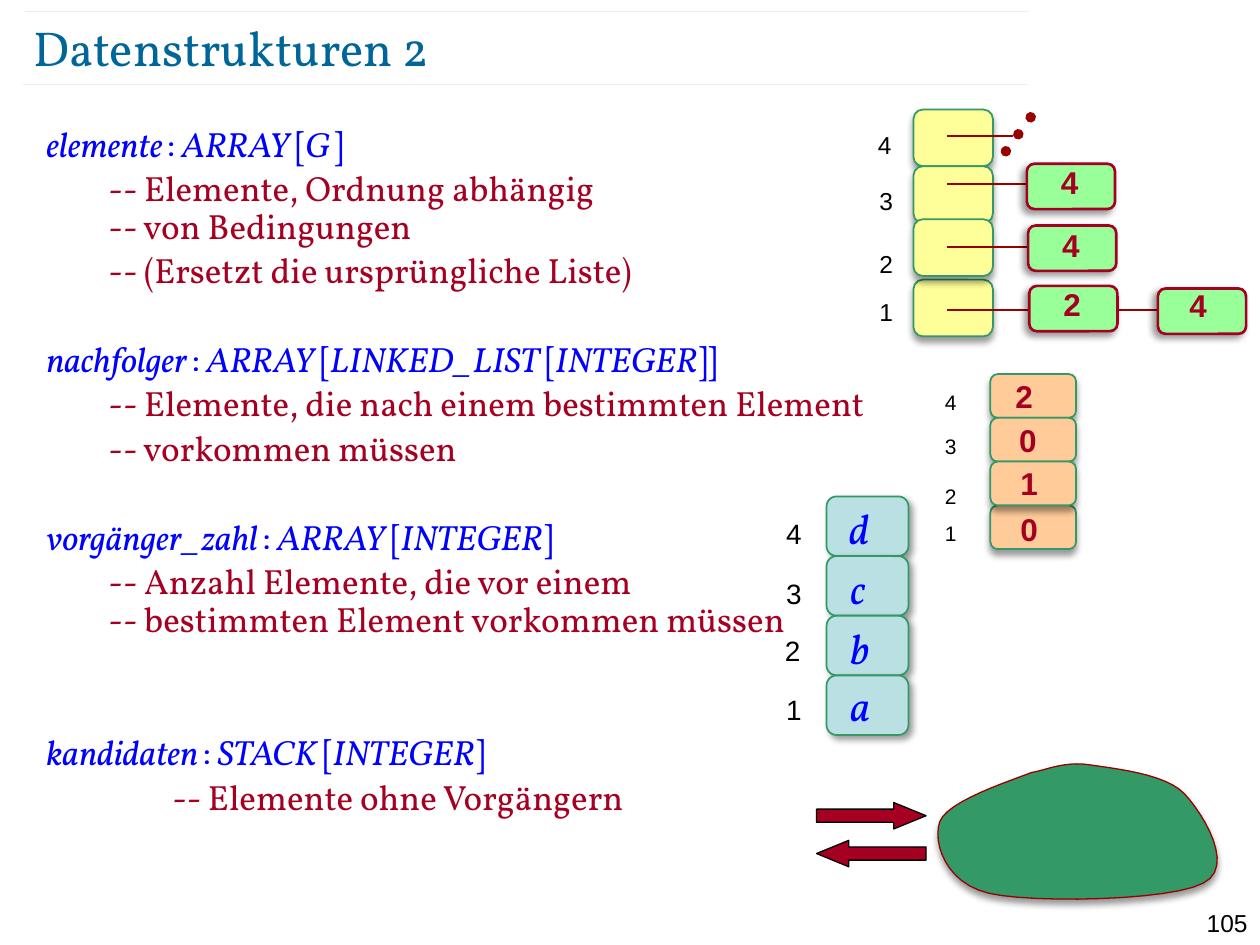
import pptx
import pptx.dml.color
import pptx.enum.dml
import pptx.enum.shapes
import pptx.enum.text
import pptx.oxml
import pptx.oxml.ns
import pptx.util

Pt = pptx.util.Pt
SHAPE = pptx.enum.shapes.MSO_SHAPE
ALIGN = pptx.enum.text.PP_ALIGN
ANCHOR = pptx.enum.text.MSO_ANCHOR

COLORS = {
    "title": "006699", "code": "0000FF", "comment": "A50021", "black": "000000",
    "link": "990000", "green": "339966", "yellow": "FFFF99", "lime": "99FF99",
    "blue": "BBE0E3", "peach": "FFCC99", "rule": "E6EFF4",
}
SERIF, SANS = "Vollkorn", "Arial"
UPRIGHT = (":", "[", "]", "]]")

# Heading pieces, comment paragraphs (with line breaks), comment indent, space before
SECTIONS = [
    (["elemente", " ", ":", " ARRAY ", "[", "G", " ", "]"],
     ["-- Elemente, Ordnung abhängig\n-- von Bedingungen",
      "-- (Ersetzt die ursprüngliche Liste)"], 35.5, 0),
    (["nachfolger", " ", ":", " ARRAY ", "[", "LINKED_LIST ", "[", "INTEGER", "]]"],
     ["-- Elemente, die nach einem bestimmten Element",
      "-- vorkommen müssen"], 35.5, 29.2),
    (["vorgänger_zahl", " ", ":", " ARRAY ", "[", "INTEGER", "]"],
     ["-- Anzahl Elemente, die vor einem\n-- bestimmten Element vorkommen müssen"],
     35.5, 29.2),
    (["kandidaten", " ", ":", " STACK ", "[", "INTEGER", "]"],
     ["-- Elemente ohne Vorgängern"], 72, 54.8),
]

# Outline of the candidate stack: start point and cubic curves, in points
BLOB_START = (589.7, 441.4)
BLOB_CURVES = [
    ((576.7, 446.4), (541.4, 457.9), (537.1, 469.4)),
    ((532.8, 481), (540, 504.7), (565.2, 510.5)),
    ((589.7, 516.2), (668.9, 514.8), (687.6, 504.7)),
    ((706.3, 495.4), (687.6, 465.1), (676.8, 453.6)),
    ((666, 442.1), (636.5, 439.2), (622.1, 437)),
    ((607.7, 434.9), (596.2, 440.6), (589.7, 441.4)),
]


def color(name):
    return pptx.dml.color.RGBColor.from_string(COLORS[name])


def add_effects(shape, angle=None):
    """Replace inherited effects by a soft shadow, or by none."""
    shadow = ""
    if angle is not None:
        shadow = (f'<a:outerShdw blurRad="{Pt(4)}" dist="{Pt(3)}" dir="{angle * 60000}" '
                  'algn="ctr" rotWithShape="0"><a:srgbClr val="000000">'
                  '<a:alpha val="40000"/></a:srgbClr></a:outerShdw>')
    shape._element.spPr.append(pptx.oxml.parse_xml(
        f'<a:effectLst {pptx.oxml.ns.nsdecls("a")}>{shadow}</a:effectLst>'))


def paint(shape, fill, line, width, angle=None):
    shape.fill.solid()
    shape.fill.fore_color.rgb = color(fill)
    shape.line.color.rgb = color(line)
    shape.line.width = Pt(width)
    add_effects(shape, angle)


def add_box(page, kind, area, fill, line, width, angle=None):
    box = page.shapes.add_shape(kind, *map(Pt, area))
    paint(box, fill, line, width, angle)
    return box


def add_line(page, start, end, name, width):
    line = page.shapes.add_connector(
        pptx.enum.shapes.MSO_CONNECTOR.STRAIGHT, *map(Pt, start + end))
    line.line.color.rgb = color(name)
    line.line.width = Pt(width)
    add_effects(line)
    return line


def add_span(para, text, size, name, font=SERIF, italic=False, bold=False):
    span = para.add_run()
    span.text = text
    span.font.size = Pt(size)
    span.font.name = font
    span.font.italic = italic
    span.font.bold = bold
    span.font.color.rgb = color(name)


def add_label(page, area, text, size, name, rounded=False, align=ALIGN.LEFT, **style):
    if rounded:
        box = page.shapes.add_shape(SHAPE.ROUNDED_RECTANGLE, *map(Pt, area))
        box.fill.background()
        box.line.fill.background()
        box.shadow.inherit = False
    else:
        box = page.shapes.add_textbox(*map(Pt, area))
    frame = box.text_frame
    frame.word_wrap = True
    frame.vertical_anchor = ANCHOR.TOP
    para = frame.paragraphs[0]
    para.alignment = align
    add_span(para, text, size, name, **style)
    return frame


def add_stack(page, left, tops, size, fill, angle):
    for top in tops:
        add_box(page, SHAPE.ROUNDED_RECTANGLE, (left, top) + size, fill, "green", 1, angle)


def add_column(page, texts, spots, size, points, name, **style):
    for text, spot in zip(texts, spots):
        add_label(page, spot + size, text, points, name, **style)


def add_body(page):
    frame = page.shapes.add_textbox(Pt(19.4), Pt(69.1), Pt(676.8), Pt(444.2)).text_frame
    frame.word_wrap = True
    para = frame.paragraphs[0]
    for heading, comments, indent, gap in SECTIONS:
        if gap:
            para = frame.add_paragraph()
        para.line_spacing = 0.9
        para.space_before = Pt(gap)
        for piece in heading:
            add_span(para, piece, 14 if piece == " " else 20, "code",
                     italic=piece not in UPRIGHT)
        for comment in comments:
            para = frame.add_paragraph()
            para._p.get_or_add_pPr().set("marL", str(Pt(indent)))
            para.line_spacing = 0.9
            para.space_before = Pt(3.7)
            for number, row in enumerate(comment.split("\n")):
                if number:
                    para.add_line_break()
                add_span(para, row, 20, "comment")


def add_blob(page, steps=12):
    points, start = [], BLOB_START
    for first, second, end in BLOB_CURVES:
        for step in range(1, steps + 1):
            t = step / steps
            weights = ((1 - t) ** 3, 3 * t * (1 - t) ** 2, 3 * t * t * (1 - t), t ** 3)
            corners = (start, first, second, end)
            points.append(tuple(Pt(sum(w * corner[axis] for w, corner in zip(weights, corners)))
                                for axis in (0, 1)))
        start = end
    builder = page.shapes.build_freeform(*map(Pt, BLOB_START))
    builder.add_line_segments(points, close=True)
    paint(builder.convert_to_shape(), "green", "link", 0.75, 90)


def add_successors(page):
    add_stack(page, 522, (159.8, 62.6, 95, 125.3), (45.4, 32.4), "yellow", 90)
    spots = [(494.6, 70.6), (495.4, 103), (495.4, 139), (495.4, 166.3)]
    add_column(page, "4321", spots, (38.2, 23.8), 14, "black", font=SANS)
    # Links, with dots for the list that goes on
    for top, right in ((77.8, 578.9), (105.1, 622.1), (141.1, 622.1), (177.1, 703.4)):
        add_line(page, (541.4, top), (right, top), "link", 1.5)
    dots = add_line(page, (589, 67), (571.7, 90.7), "link", 6)
    dots.line.dash_style = pptx.enum.dml.MSO_LINE.ROUND_DOT
    dots.line._get_or_add_ln().set("cap", "rnd")
    # Linked nodes and their values
    for left, top in ((588.2, 163.4), (661.7, 164.9), (587.5, 128.9), (586.8, 93.6)):
        add_box(page, SHAPE.ROUNDED_RECTANGLE, (left, top, 50.4, 25.9),
                "lime", "comment", 1.5, 135)
    spots = [(599, 157.7), (598.3, 123.8), (597.6, 87.8), (671, 158.4)]
    add_column(page, "2444", spots, (41.8, 32.4), 18, "comment",
               rounded=True, font=SANS, bold=True)


def add_elements(page):
    add_stack(page, 472.3, [283.7 + 34.1 * row for row in range(4)], (46.8, 34), "blue", 45)
    spots = [(478.1, 283.7), (478.8, 318.2), (478.8, 352.1), (478.8, 384.5)]
    add_column(page, "dcba", spots, (38.9, 36), 24, "code", italic=True)
    spots = [(442.1, 291.6), (442.1, 326.2), (441.4, 358.6), (442.1, 392.4)]
    add_column(page, "4321", spots, (38.9, 26.6), 16, "black", font=SANS)


def add_counts(page):
    add_stack(page, 565.9, [213.8 + 25 * row for row in (3, 0, 1, 2)], (49, 25), "peach", 90)
    spots = [(532.8, top) for top in (218.9, 244.1, 272.9, 293.8)]
    add_column(page, "4321", spots, (29.5, 21.6), 12, "black", font=SANS)
    spots = [(573.1, 211.7), (575.3, 236.9), (576, 261.4), (576, 288)]
    add_column(page, "2010", spots, (31, 28.8), 18, "comment", font=SANS, bold=True)


def add_candidates(page):
    add_blob(page)
    for kind, top in ((SHAPE.RIGHT_ARROW, 458.6), (SHAPE.LEFT_ARROW, 480.2)):
        arrow = add_box(page, kind, (466.6, top, 62.6, 15.1), "comment", "black", 0.75)
        arrow.adjustments[1] = 1.22


def main():
    deck = pptx.Presentation()
    deck.slide_width, deck.slide_height = Pt(720), Pt(540)
    page = deck.slides.add_slide(deck.slide_layouts[6])

    # Page frame: rules, number, title
    for left, top in ((13, 48.2), (14.4, 6.5)):
        add_line(page, (left, top), (left + 573.8, top), "rule", 0.1)
    add_label(page, (680.4, 515.5, 39.6, 17.3), "105", 14, "black",
              align=ALIGN.RIGHT, font=SANS)
    title = add_label(page, (19.4, 9.4, 625.7, 34.6), "Datenstrukturen 2", 28, "title")
    title.margin_left = title.margin_right = title.margin_top = title.margin_bottom = 0
    title.vertical_anchor = ANCHOR.MIDDLE

    # Declarations and their diagrams
    add_body(page)
    add_successors(page)
    add_candidates(page)
    add_elements(page)
    add_counts(page)
    deck.save("out.pptx")


if __name__ == "__main__":
    main()
